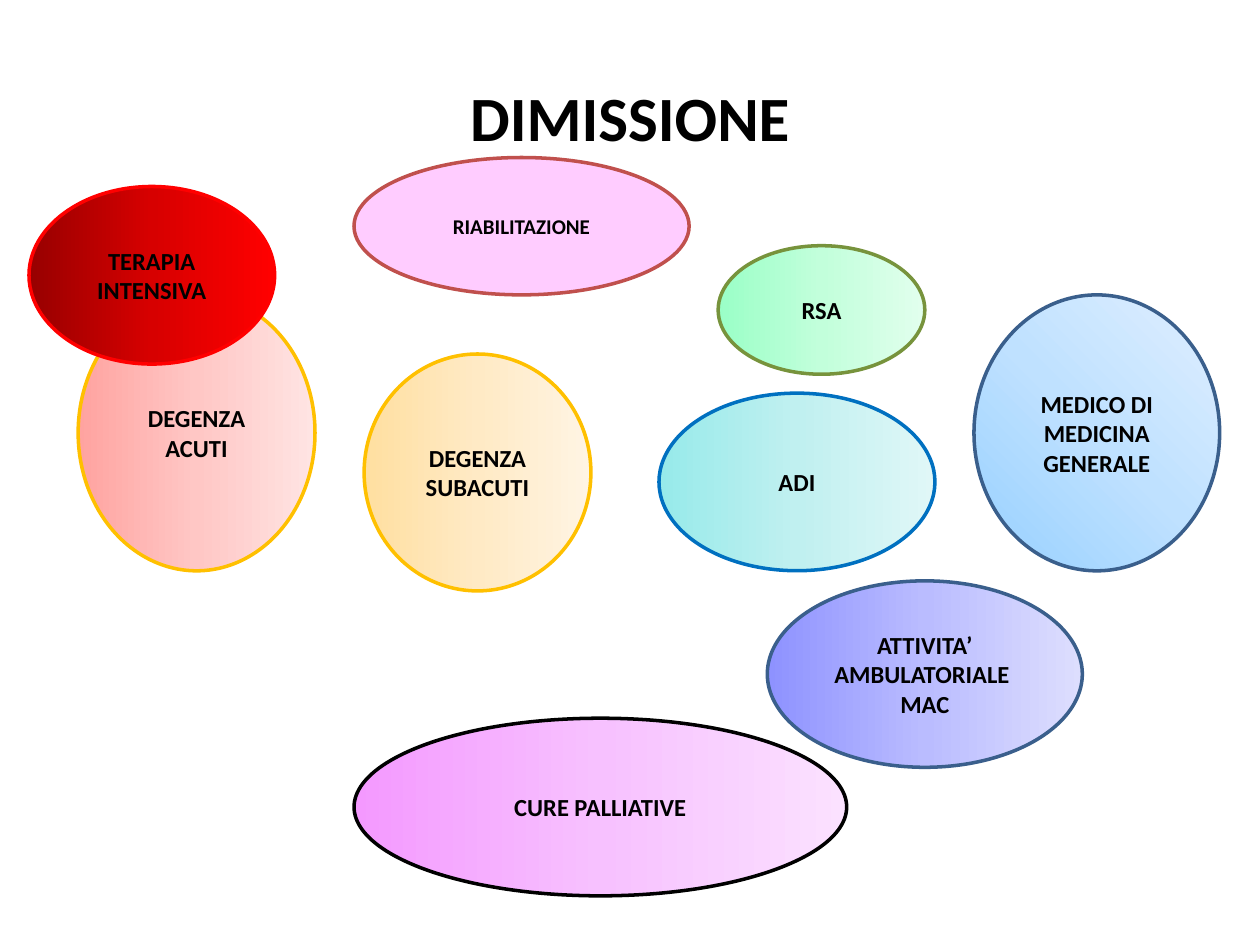
from copy import deepcopy

from lxml import etree
from pptx import Presentation
from pptx.dml.color import RGBColor
from pptx.enum import shapes, text
from pptx.oxml.ns import qn
from pptx.util import Inches, Pt

TITLE = "DIMISSIONE"
FONT = "Calibri"

# Care settings, back to front: lines, (left, top, width, height), fill colours, outline, text size
SETTINGS = [
    (["DEGENZA", "ACUTI"], (0.62, 2.34, 1.88, 2.19), ["FFA3A0", "FFC7C5", "FFE4E3"], "FFC000", 14),
    (["TERAPIA", "INTENSIVA"], (0.23, 1.48, 1.95, 1.41), ["970000", "D70000", "FF0000"], "FF0000", 14),
    (["MEDICO DI", "MEDICINA", "GENERALE"], (7.73, 2.34, 1.95, 2.19),
     ["96D0FF", "BFE1FF", "E0EFFF"], "3A5F8C", 14),
    (["DEGENZA", "SUBACUTI"], (2.89, 2.81, 1.8, 1.88), ["FFDFA0", "FFEAC5", "FFF4E3"], "FFC000", 14),
    (["RIABILITAZIONE"], (2.81, 1.25, 2.66, 1.09), ["FFCCFF"], "C0504D", 12),
    (["CURE PALLIATIVE"], (2.81, 5.7, 3.91, 1.41), ["F499FF", "F7C1FF", "FBE1FF"], "000000", 14),
    (["RSA"], (5.7, 1.95, 1.64, 1.02), ["9AFFC7", "C2FFDB", "E1FFED"], "77933C", 14),
    (["ADI"], (5.23, 3.12, 2.19, 1.41), ["97EAEA", "C0F0F0", "E0F7F7"], "0070C0", 14),
    (["ATTIVITA’", "AMBULATORIALE ", "MAC"], (6.09, 4.61, 2.5, 1.48),
     ["8E92FF", "BABCFF", "DDDEFE"], "3A5F8C", 14),
]
RADIAL = "MEDICO DI"  # the one ellipse shaded outwards from its lower left corner


def color(value):
    return RGBColor.from_string(value)


def write(shape, lines, size):
    frame = shape.text_frame
    frame.word_wrap = True
    frame.vertical_anchor = text.MSO_ANCHOR.MIDDLE
    frame.text = "\n".join(lines)
    for paragraph in frame.paragraphs:
        paragraph.alignment = text.PP_ALIGN.CENTER
        paragraph.font.name = FONT
        paragraph.font.size = Pt(size)
        paragraph.font.bold = True
        paragraph.font.color.rgb = color("000000")


def shade(shape, colors, radial):
    fill = shape.fill
    if len(colors) == 1:
        fill.solid()
        fill.fore_color.rgb = color(colors[0])
        return
    fill.gradient()
    fill.gradient_angle = 0
    # The default gradient has two stops; add the middle one
    stops = shape._element.spPr.find(".//" + qn("a:gsLst"))
    stops.append(deepcopy(stops[0]))
    for index, (stop, value) in enumerate(zip(fill.gradient_stops, colors)):
        stop.position = index / (len(colors) - 1)
        stop.color.rgb = color(value)
    if radial:
        linear = stops.getparent().find(qn("a:lin"))
        circle = etree.Element(qn("a:path"), path="circle")
        etree.SubElement(circle, qn("a:fillToRect"), t="100000", r="100000")
        linear.getparent().replace(linear, circle)


def add_setting(slide, lines, box, colors, outline, size):
    ellipse = slide.shapes.add_shape(shapes.MSO_SHAPE.OVAL, *map(Inches, box))
    ellipse.shadow.inherit = False
    shade(ellipse, colors, lines[0] == RADIAL)
    ellipse.line.color.rgb = color(outline)
    ellipse.line.width = Pt(2)
    write(ellipse, lines, size)


def main():
    presentation = Presentation()
    presentation.slide_width, presentation.slide_height = Inches(10), Inches(7.5)
    slide = presentation.slides.add_slide(presentation.slide_layouts[6])

    # Title
    title = slide.shapes.add_textbox(*map(Inches, (0.5, 0.3, 9, 1.25)))
    write(title, [TITLE], 36)

    # Ellipses
    for setting in SETTINGS:
        add_setting(slide, *setting)

    presentation.save("out.pptx")


if __name__ == "__main__":
    main()
